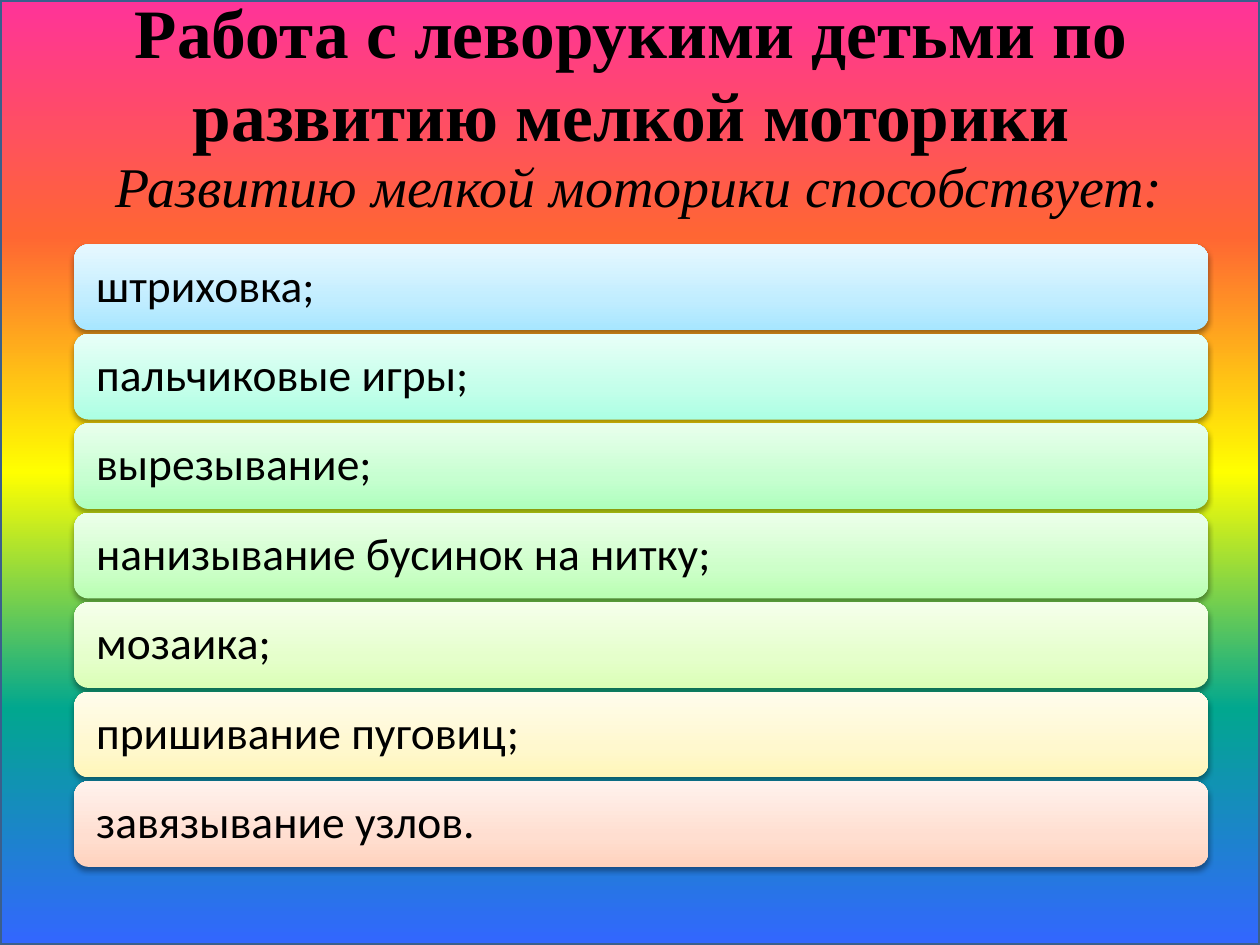
from lxml import etree
from pptx import Presentation
from pptx.dml.color import RGBColor
from pptx.enum.shapes import MSO_SHAPE
from pptx.enum.text import MSO_ANCHOR, PP_ALIGN
from pptx.oxml.ns import qn
from pptx.util import Inches, Pt

RECTANGLE, ROUNDED = MSO_SHAPE.RECTANGLE, MSO_SHAPE.ROUNDED_RECTANGLE
TOP, MIDDLE = MSO_ANCHOR.TOP, MSO_ANCHOR.MIDDLE
LEFT, CENTER = PP_ALIGN.LEFT, PP_ALIGN.CENTER

BLACK = RGBColor(0, 0, 0)
FRAME_BLUE = RGBColor(0x3A, 0x5F, 0x8C)
SERIF, SANS = "Times New Roman", "Calibri"

TITLE = "Работа с леворукими детьми по развитию мелкой моторики"
SUBTITLE = "Развитию мелкой моторики способствует:"
RAINBOW = [(0, "FF3399"), (25, "FF6633"), (50, "FFFF00"), (75, "01A78F"), (100, "3366FF")]
# Activity, then its bar colours from bottom to top
ACTIVITIES = [
    ("штриховка;", ("A7E6FF", "C1EDFF", "E7F8FF")),
    ("пальчиковые игры;", ("ABFFE3", "C3FFEA", "E8FFF7")),
    ("вырезывание;", ("AEFFBD", "C6FFD0", "E9FFED")),
    ("нанизывание бусинок на нитку;", ("B9FFB2", "CDFFC9", "ECFFEA")),
    ("мозаика;", ("DBFFB6", "E5FFCB", "F5FFEB")),
    ("пришивание пуговиц;", ("FFF6B9", "FFF8CE", "FFFCEC")),
    ("завязывание узлов.", ("FFD2BD", "FFDED0", "FFF2ED")),
]
BAR_STOPS = (0, 35, 100)
BAR_LEFT, BAR_TOP, BAR_WIDTH, BAR_HEIGHT = 0.59, 1.94, 9, 0.68
BAR_STEP = 0.71


def add_gradient_shape(slide, kind, box, stops, angle):
    """Angle is counter-clockwise, as python-pptx counts it."""
    shape = slide.shapes.add_shape(kind, *map(Inches, box))
    shape.shadow.inherit = False
    shape.line.fill.background()
    shape.fill.gradient()
    shape.fill.gradient_angle = angle
    stop_list = shape._element.spPr.find(".//" + qn("a:gsLst"))
    for old_stop in list(stop_list):
        stop_list.remove(old_stop)
    for position, color in stops:
        stop = etree.SubElement(stop_list, qn("a:gs"), pos=str(position * 1000))
        etree.SubElement(stop, qn("a:srgbClr"), val=color)
    return shape


def add_drop_shadow(shape):
    effects = shape._element.spPr.find(qn("a:effectLst"))
    shadow = etree.SubElement(effects, qn("a:outerShdw"), blurRad="40000",
                              dist="20000", dir="5400000", rotWithShape="0")
    color = etree.SubElement(shadow, qn("a:srgbClr"), val="000000")
    etree.SubElement(color, qn("a:alpha"), val="38000")


def write_text(shape, text, font=SERIF, size=32, bold=False, italic=False,
               align=CENTER, anchor=TOP, side_margin=0.1, spacing=1.0):
    frame = shape.text_frame
    frame.word_wrap = True
    frame.vertical_anchor = anchor
    frame.margin_left = frame.margin_right = Inches(side_margin)
    paragraph = frame.paragraphs[0]
    paragraph.alignment = align
    paragraph.line_spacing = spacing
    run = paragraph.add_run()
    run.text = text
    run.font.name = font
    run.font.size = Pt(size)
    run.font.bold = bold
    run.font.italic = italic
    run.font.color.rgb = BLACK


def main():
    presentation = Presentation()
    presentation.slide_width, presentation.slide_height = Inches(10), Inches(7.5)
    slide = presentation.slides.add_slide(presentation.slide_layouts[6])

    backdrop = add_gradient_shape(slide, RECTANGLE, (0, 0, 10, 7.5), RAINBOW, 270)
    backdrop.line.color.rgb = FRAME_BLUE
    backdrop.line.width = Pt(2)

    title = slide.shapes.add_textbox(*map(Inches, (0.51, 0, 9, 1.15)))
    write_text(title, TITLE, size=39.6, bold=True, anchor=MIDDLE)
    subtitle = slide.shapes.add_textbox(*map(Inches, (0.51, 1.15, 9.13, 0.64)))
    write_text(subtitle, SUBTITLE, italic=True)

    for index, (activity, colors) in enumerate(ACTIVITIES):
        box = (BAR_LEFT, BAR_TOP + index * BAR_STEP, BAR_WIDTH, BAR_HEIGHT)
        bar = add_gradient_shape(slide, ROUNDED, box, zip(BAR_STOPS, colors), 90)
        add_drop_shadow(bar)
        write_text(bar, activity, font=SANS, size=26, align=LEFT, anchor=MIDDLE,
                   side_margin=0.14, spacing=0.9)

    presentation.save("out.pptx")


if __name__ == "__main__":
    main()
